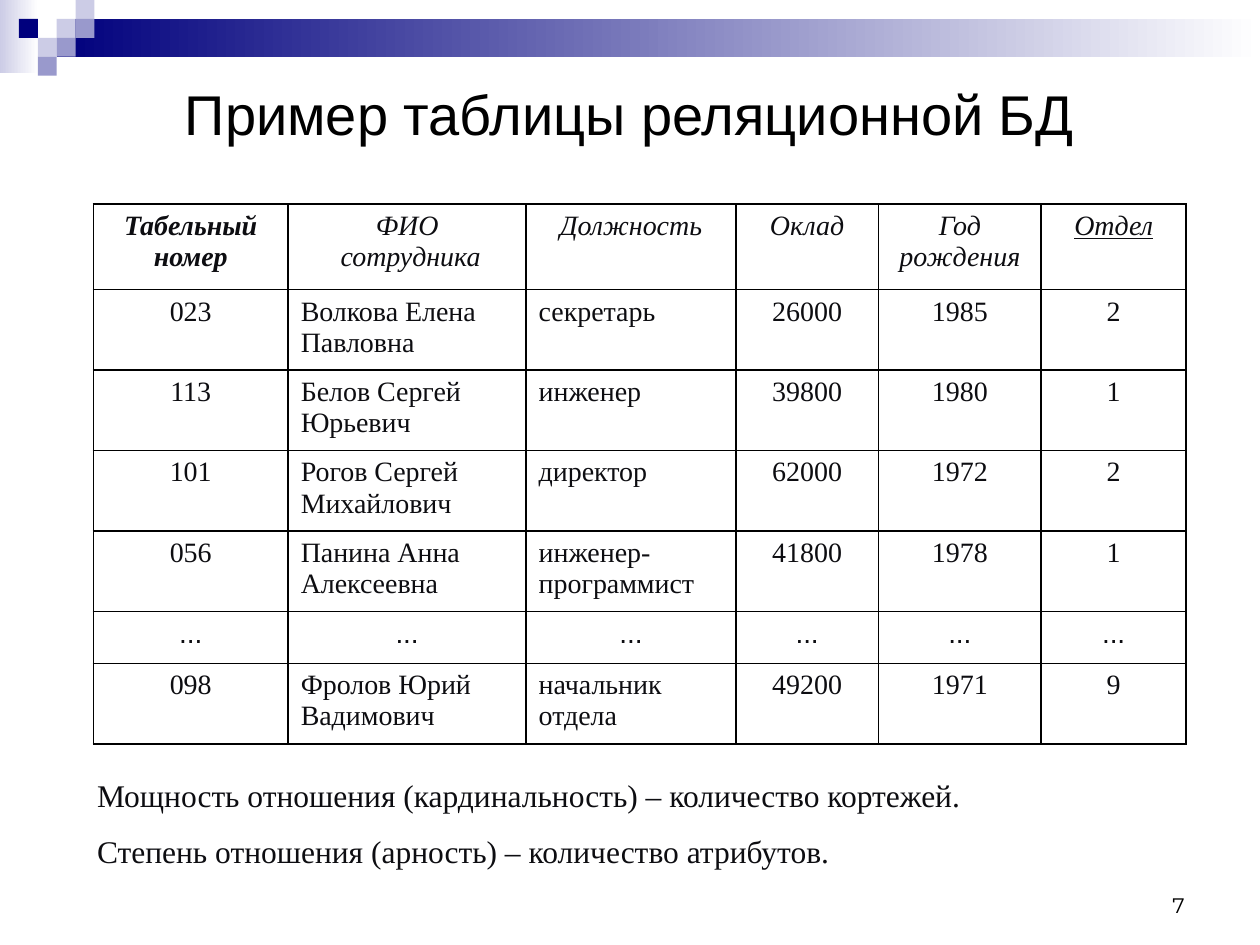
"""Build the slide with a sample relational database table."""
from lxml.etree import SubElement
from pptx import Presentation
from pptx.dml.color import RGBColor
from pptx.enum.shapes import MSO_SHAPE as Shape
from pptx.enum.text import MSO_ANCHOR as Anchor, PP_ALIGN as Align
from pptx.oxml import parse_xml
from pptx.oxml.ns import nsdecls, qn
from pptx.util import Pt

NAVY, LILAC, PALE, WHITE, BLACK, INK = "00007D", "9999CC", "CCCCE6", "FFFFFF", "000000", "0D0D11"
UNIT = 10.8
BARS = [((0, 0, 22, 42), PALE), ((32.4, 10.8, 687.6, 21.6), NAVY)]
TILES = [(3, 1, PALE), (4, 0, PALE), (4, 1, LILAC), (2, 2, PALE),
         (1, 1, NAVY), (3, 2, LILAC), (2, 3, LILAC)]

TITLE = "Пример таблицы реляционной БД"
HEAD = ["Табельный номер", "ФИО\n сотрудника", "Должность", "Оклад", "Год\nрождения", "Отдел"]
STAFF = [
    ["023", "Волкова Елена Павловна", "секретарь", "26000", "1985", "2"],
    ["113", "Белов Сергей Юрьевич", "инженер", "39800", "1980", "1"],
    ["101", "Рогов Сергей Михайлович", "директор", "62000", "1972", "2"],
    ["056", "Панина Анна Алексеевна", "инженер-программист", "41800", "1978", "1"],
    ["..."] * 6,
    ["098", "Фролов Юрий Вадимович", "начальник отдела", "49200", "1971", "9"],
]
NOTES = ["Мощность отношения (кардинальность) – количество кортежей.",
         "Степень отношения (арность) – количество атрибутов."]
COLS = [111.4, 136, 119.8, 81.6, 93, 82.8]
ROWS = [49, 46, 46, 46, 46, 29.6, 46]
BODY = {"name": "Times New Roman", "size": Pt(16)}


def rgb(code):
    """Turn a hex string into a colour."""
    return RGBColor.from_string(code)


def write(para, text, align, look, color=INK):
    """Fill a paragraph with formatted text."""
    para.text, para.alignment = text, align
    for run in para.runs:
        run.font.color.rgb = rgb(color)
        for key, value in look.items():
            setattr(run.font, key, value)
    for line in para._p.findall(qn("a:br")):
        SubElement(line, qn("a:rPr")).set("sz", str(int(look["size"].pt * 100)))


def block(slide, box, lines, align, anchor, look, color=INK):
    """Add a wrapped text box with one paragraph per line."""
    frame = slide.shapes.add_textbox(*map(Pt, box)).text_frame
    frame.word_wrap, frame.vertical_anchor = True, anchor
    for i, line in enumerate(lines):
        para = frame.add_paragraph() if i else frame.paragraphs[0]
        para.space_before = Pt(10 if i else 0)
        write(para, line, align, look, color)


def rect(slide, box, color, fade=False):
    """Add a plain rectangle, optionally fading to white."""
    shape = slide.shapes.add_shape(Shape.RECTANGLE, *map(Pt, box))
    shape.shadow.inherit = False
    shape.line.fill.background()
    if fade:
        shape.fill.gradient()
        shape.fill.gradient_angle = 0
        for stop, code in zip(shape.fill.gradient_stops, (color, WHITE)):
            stop.color.rgb = rgb(code)
    else:
        shape.fill.solid()
        shape.fill.fore_color.rgb = rgb(color)


def frame_cell(cell):
    """Clear the fill of a cell and outline it."""
    cell.fill.background()
    for i, side in enumerate("LRTB"):
        cell._tc.tcPr.insert(i, parse_xml(
            f'<a:ln{side} {nsdecls("a")} w="{Pt(1)}"><a:solidFill>'
            f'<a:srgbClr val="{BLACK}"/></a:solidFill></a:ln{side}>'))


def style(row, col, text):
    """Choose the alignment and font of a table cell."""
    if row == 0:
        return Align.CENTER, BODY | {"italic": True, "bold": col == 0, "underline": col == 5}
    if text == "...":
        return Align.CENTER, BODY | {"name": "Arial"}
    return (Align.LEFT if col in (1, 2) else Align.CENTER), BODY


def grid(slide):
    """Add the staff table."""
    data = [HEAD] + STAFF
    box = (53.3, 116.6, sum(COLS), sum(ROWS))
    table = slide.shapes.add_table(len(ROWS), len(COLS), *map(Pt, box)).table
    table.first_row = table.horz_banding = False
    for col, width in zip(table.columns, COLS):
        col.width = Pt(width)
    for r, (row, height) in enumerate(zip(table.rows, ROWS)):
        row.height = Pt(height)
        for c, (cell, text) in enumerate(zip(row.cells, data[r])):
            frame_cell(cell)
            write(cell.text_frame.paragraphs[0], text, *style(r, c, text))


def main():
    """Build and save the slide."""
    deck = Presentation()
    deck.slide_width, deck.slide_height = Pt(720), Pt(540)
    slide = deck.slides.add_slide(deck.slide_layouts[6])
    for box, color in BARS:
        rect(slide, box, color, True)
    for col, row, color in TILES:
        rect(slide, (col * UNIT, row * UNIT, UNIT, UNIT), color)
    block(slide, (36, 36, 648, 57), [TITLE], Align.CENTER, Anchor.MIDDLE,
          {"name": "Arial", "size": Pt(32)}, BLACK)
    grid(slide)
    block(slide, (48.4, 440, 612, 62), NOTES, Align.LEFT, Anchor.TOP, BODY | {"size": Pt(18)})
    block(slide, (516, 492, 168, 36), ["7"], Align.RIGHT, Anchor.BOTTOM,
          {"name": "Montserrat", "size": Pt(12)}, BLACK)
    deck.save("out.pptx")


if __name__ == "__main__":
    main()
